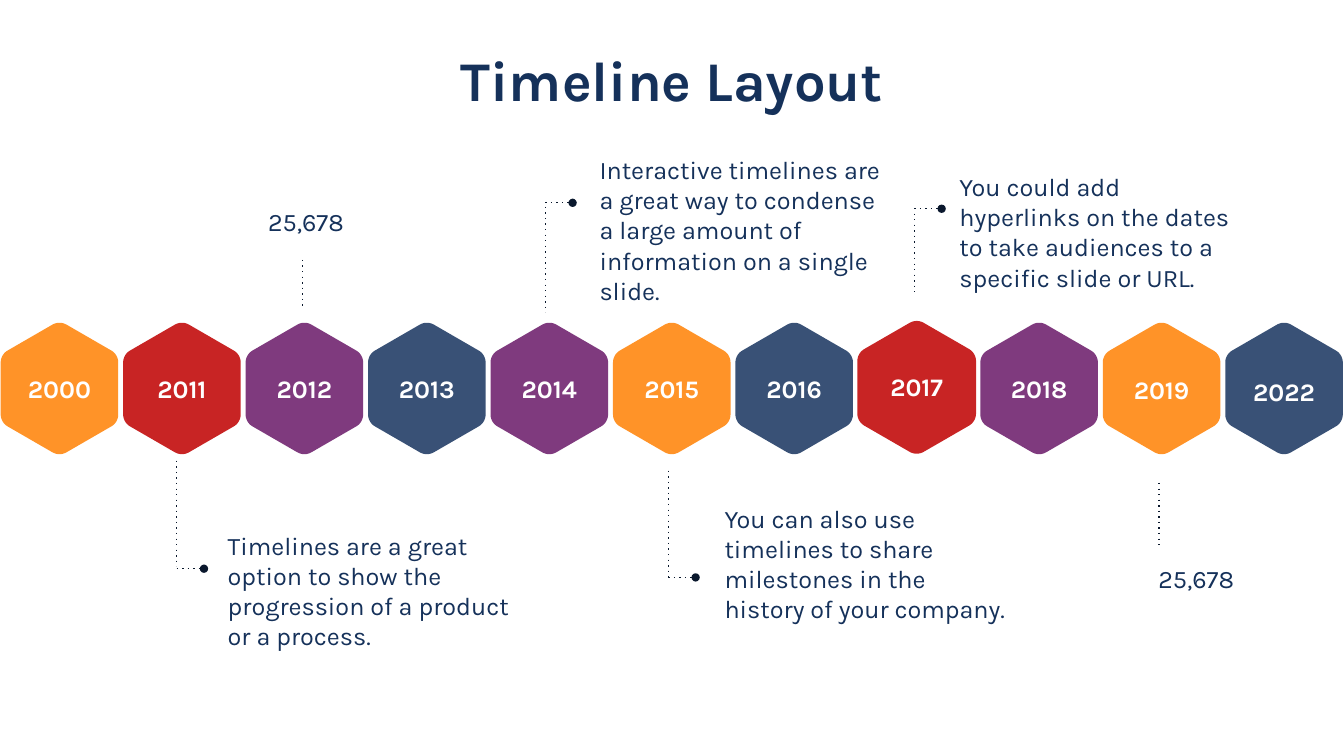
import math
from dataclasses import dataclass
from typing import Any, Optional

import lxml.etree
import pptx
import pptx.dml.color
import pptx.enum.shapes
import pptx.enum.text
import pptx.oxml.ns
import pptx.util

Cm = pptx.util.Cm
Pt = pptx.util.Pt
ALIGN = pptx.enum.text.PP_ALIGN
ANCHOR = pptx.enum.text.MSO_ANCHOR
qn = pptx.oxml.ns.qn

FONT = "Karla"
INK, DOTS, WHITE = "15315A", "0A182D", "FFFFFF"
ORANGE, RED, PURPLE, NAVY = "FF8409", "C00000", "6D1D6B", "193560"

FIRST_CENTRE, LAST_CENTRE, ROW_CENTRE = 1.5, 32.36, 9.79
HEX_RADIUS, CORNER_RADIUS = 1.71, 0.35
YEAR_WIDTH, YEAR_HEIGHT = 2.67, 0.89
CALLOUT_WIDTH, BRANCH_LENGTH = 7.62, 0.69


@dataclass
class Milestone:
    year: str
    colour: str
    opacity: int
    hex_shift: float = 0
    year_shift: float = 0
    scale: float = 1


@dataclass
class Stem:
    x: float
    top: float
    bottom: float


@dataclass
class Callout:
    text: str
    left: float
    top: float
    height: float
    stem: Stem
    branch_y: float


@dataclass
class Figure:
    text: str
    left: float
    top: float
    width: float
    height: float
    anchor: Any
    stem: Stem


MILESTONES = [
    Milestone("2000", ORANGE, 87),
    Milestone("2011", RED, 86),
    Milestone("2012", PURPLE, 87),
    Milestone("2013", NAVY, 86),
    Milestone("2014", PURPLE, 87),
    Milestone("2015", ORANGE, 87),
    Milestone("2016", NAVY, 86),
    Milestone("2017", RED, 86, hex_shift=-0.03, year_shift=-0.05, scale=1.01),
    Milestone("2018", PURPLE, 87),
    Milestone("2019", ORANGE, 87, year_shift=0.02),
    Milestone("2022", NAVY, 86, year_shift=0.08),
]

CALLOUTS = [
    Callout("Timelines are a great option to show the progression of a product or a process.",
            5.49, 13.23, 3.33, Stem(4.45, 11.61, 14.27), 14.33),
    Callout("Interactive timelines are a great way to condense a large amount of "
            "information on a single slide.",
            14.86, 3.76, 4.11, Stem(13.74, 5.21, 7.87), 5.11),
    Callout("You can also use timelines to share milestones in the history of your company.",
            18.01, 12.55, 3.33, Stem(16.84, 11.86, 14.53), 14.55),
    Callout("You could add hyperlinks on the dates to take audiences to a specific slide or URL.",
            23.93, 4.19, 3.33, Stem(23.04, 5.38, 7.37), 5.26),
]

FIGURES = [
    Figure("25,678", 5.41, 5.05, 4.6, 1.04, ANCHOR.BOTTOM, Stem(7.62, 6.55, 7.7)),
    Figure("25,678", 26.92, 13.84, 6.45, 1.73, ANCHOR.MIDDLE, Stem(29.21, 12.17, 13.72)),
]


def paint(fill: Any, colour: str) -> None:
    fill.solid()
    fill.fore_color.rgb = pptx.dml.color.RGBColor.from_string(colour)


def write(paragraph: Any, text: str, size: float, colour: str, bold: bool = False) -> None:
    run = paragraph.add_run()
    run.text = text
    run.font.name = FONT
    run.font.size = Pt(size)
    run.font.bold = bold
    paint(run.font.fill, colour)


def add_text(slide: Any, text: str, left: float, top: float, width: float, height: float,
             colour: str = INK, bold: bool = False, align: Any = ALIGN.LEFT,
             anchor: Any = ANCHOR.TOP, spacing: Optional[Any] = None) -> Any:
    frame = slide.shapes.add_textbox(Cm(left), Cm(top), Cm(width), Cm(height)).text_frame
    frame.word_wrap = True
    frame.vertical_anchor = anchor
    paragraph = frame.paragraphs[0]
    paragraph.alignment = align
    paragraph.line_spacing = spacing
    write(paragraph, text, 18, colour, bold)
    return frame


def add_dotted(slide: Any, x1: float, y1: float, x2: float, y2: float,
               ends_in_oval: bool = False) -> None:
    connector = slide.shapes.add_connector(
        pptx.enum.shapes.MSO_CONNECTOR.STRAIGHT, Cm(x1), Cm(y1), Cm(x2), Cm(y2))
    connector.line.width = Pt(1)
    paint(connector.line.fill, DOTS)
    properties = connector._element.spPr
    outline = properties.find(qn("a:ln"))
    lxml.etree.SubElement(outline, qn("a:prstDash"), val="dot")
    if ends_in_oval:
        lxml.etree.SubElement(outline, qn("a:tailEnd"), type="oval")
    lxml.etree.SubElement(properties, qn("a:effectLst"))


def add_stem(slide: Any, stem: Stem) -> None:
    add_dotted(slide, stem.x, stem.top, stem.x, stem.bottom)


def add_hexagon(slide: Any, x: float, y: float, milestone: Milestone) -> None:
    corner = CORNER_RADIUS * milestone.scale
    reach = HEX_RADIUS * milestone.scale - corner / math.cos(math.radians(30))
    points = []
    for vertex in range(30, 390, 60):
        direction = math.radians(vertex)
        for turn in range(-30, 31, 6):
            angle = math.radians(vertex + turn)
            points.append((Cm(x + reach * math.cos(direction) + corner * math.cos(angle)),
                           Cm(y + reach * math.sin(direction) + corner * math.sin(angle))))
    builder = slide.shapes.build_freeform(*points[0])
    builder.add_line_segments(points[1:], close=True)
    hexagon = builder.convert_to_shape()
    hexagon.shadow.inherit = False
    hexagon.line.fill.background()
    paint(hexagon.fill, milestone.colour)
    tint = hexagon._element.spPr.find(qn("a:solidFill")).find(qn("a:srgbClr"))
    lxml.etree.SubElement(tint, qn("a:alpha"), val=str(milestone.opacity * 1000))


def add_milestone(slide: Any, x: float, milestone: Milestone) -> None:
    add_hexagon(slide, x, ROW_CENTRE + milestone.hex_shift, milestone)
    add_text(slide, milestone.year, x - YEAR_WIDTH / 2,
             ROW_CENTRE + milestone.year_shift - YEAR_HEIGHT / 2, YEAR_WIDTH, YEAR_HEIGHT,
             WHITE, True, ALIGN.CENTER, ANCHOR.MIDDLE)


def add_callout(slide: Any, callout: Callout) -> None:
    add_stem(slide, callout.stem)
    add_dotted(slide, callout.stem.x, callout.branch_y,
               callout.stem.x + BRANCH_LENGTH, callout.branch_y, ends_in_oval=True)
    frame = add_text(slide, callout.text, callout.left, callout.top,
                     CALLOUT_WIDTH, callout.height)
    frame.auto_size = pptx.enum.text.MSO_AUTO_SIZE.SHAPE_TO_FIT_TEXT


def add_figure(slide: Any, figure: Figure) -> None:
    add_stem(slide, figure.stem)
    add_text(slide, figure.text, figure.left, figure.top, figure.width, figure.height,
             align=ALIGN.CENTER, anchor=figure.anchor, spacing=Pt(13.8))


def add_title(slide: Any, text: str) -> None:
    title = slide.shapes.title
    title.left, title.top, title.width, title.height = Cm(2.33), Cm(0.64), Cm(29.21), Cm(2.92)
    title.text_frame.vertical_anchor = ANCHOR.MIDDLE
    heading = title.text_frame.paragraphs[0]
    heading.alignment = ALIGN.CENTER
    heading.line_spacing = 0.9
    write(heading, text, 40, INK, True)


def main() -> None:
    presentation = pptx.Presentation()
    presentation.slide_width, presentation.slide_height = Cm(33.87), Cm(19.05)
    slide = presentation.slides.add_slide(presentation.slide_layouts[5])
    add_title(slide, "Timeline Layout")
    pitch = (LAST_CENTRE - FIRST_CENTRE) / (len(MILESTONES) - 1)
    for position, milestone in enumerate(MILESTONES):
        add_milestone(slide, FIRST_CENTRE + position * pitch, milestone)
    for callout in CALLOUTS:
        add_callout(slide, callout)
    for figure in FIGURES:
        add_figure(slide, figure)
    presentation.save("out.pptx")


if __name__ == "__main__":
    main()
